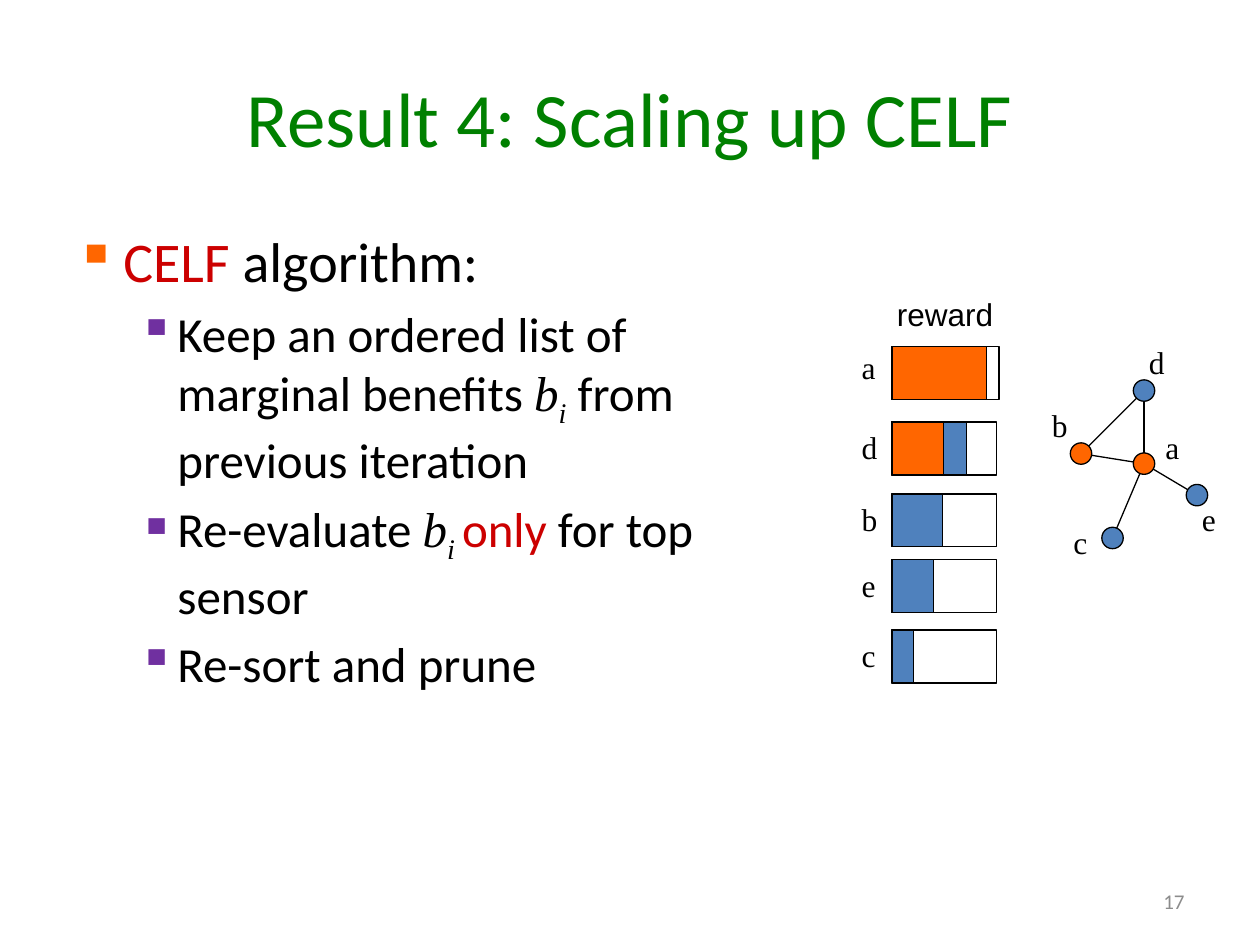
from lxml.etree import SubElement
from pptx import Presentation
from pptx.dml.color import RGBColor
from pptx.enum.shapes import MSO_CONNECTOR, MSO_SHAPE
from pptx.enum.text import MSO_ANCHOR, PP_ALIGN
from pptx.oxml.ns import qn
from pptx.util import Inches, Pt

BLACK, RED, GREEN, GRAY = "000000", "CC0000", "008000", "8C8C8C"
ORANGE, BLUE, PURPLE = "FF6600", "4F81BD", "7030A0"
SANS, SERIF = "Calibri", "Times New Roman"

TITLE = "Result 4: Scaling up CELF"
PAGE = "17"
# Each bullet: level, then runs of (text, style)
BULLETS = [
    (0, [("CELF ", "key"), ("algorithm:", "plain")]),
    (1, [("Keep an ordered list of marginal benefits ", "plain"), ("b", "math"),
         ("i", "sub"), (" from previous iteration", "plain")]),
    (1, [("Re-evaluate ", "plain"), ("b", "math"), ("i ", "sub"), ("only", "key"),
         (" for top sensor", "plain")]),
    (1, [("Re-sort and prune", "plain")]),
]
# Each level: size, left margin, hanging indent, bullet colour
LEVELS = [(32, 0.38, 0.38, ORANGE), (28, 0.81, 0.31, PURPLE)]
STYLES = {"plain": (SANS, BLACK), "key": (SANS, RED),
          "math": (SERIF, BLACK), "sub": (SERIF, BLACK)}

# Each reward: sensor, top, label top, frame width, filled parts from back to front
REWARDS = [
    ("a", 2.75, 2.71, 0.85, [(ORANGE, 0.75)]),
    ("d", 3.35, 3.35, 0.83, [(BLUE, 0.59), (ORANGE, 0.41)]),
    ("b", 3.92, 3.92, 0.83, [(BLUE, 0.4)]),
    ("e", 4.44, 4.44, 0.83, [(BLUE, 0.33)]),
    ("c", 5.0, 5.0, 0.83, [(BLUE, 0.17)]),
]
BAR_LEFT, BAR_HEIGHT, LABEL_LEFT = 7.08, 0.42, 6.74

# Each node: centre, colour, label corner
NODES = {
    "a": ((9.08, 3.68), ORANGE, (9.15, 3.35)),
    "b": ((8.58, 3.6), ORANGE, (8.25, 3.17)),
    "c": ((8.83, 4.27), BLUE, (8.42, 4.1)),
    "d": ((9.08, 3.1), BLUE, (9.02, 2.67)),
    "e": ((9.5, 3.93), BLUE, (9.44, 3.92)),
}
EDGES = ["db", "ac", "da", "ea", "ab"]
NODE_SIZE = 0.17


def rgb(code):
    return RGBColor.from_string(code)


def set_font(font, size, name, color):
    font.size, font.name = Pt(size), name
    font.color.rgb = rgb(color)


def add_label(slide, text, left, top, width=0.33, height=0.4, size=18, name=SERIF,
              color=BLACK):
    frame = slide.shapes.add_textbox(*map(Inches, (left, top, width, height))).text_frame
    frame.word_wrap = False
    frame.text = text
    set_font(frame.paragraphs[0].font, size, name, color)
    return frame


def add_outlined(slide, kind, left, top, width, height, fill=None):
    shape = slide.shapes.add_shape(kind, *map(Inches, (left, top, width, height)))
    shape.shadow.inherit = False
    if fill:
        shape.fill.solid()
        shape.fill.fore_color.rgb = rgb(fill)
    else:
        shape.fill.background()
    shape.line.color.rgb = rgb(BLACK)
    shape.line.width = Pt(0.75)


def add_edge(slide, start, end):
    edge = slide.shapes.add_connector(MSO_CONNECTOR.STRAIGHT, *map(Inches, start + end))
    edge.line.color.rgb = rgb(BLACK)
    edge.line.width = Pt(0.75)
    SubElement(edge._element.spPr, qn("a:effectLst"))


def add_bullet(paragraph, level, runs):
    size, margin, hanging, color = LEVELS[level]
    paragraph.level = level
    paragraph.space_before = Pt(size * 0.2)
    properties = paragraph._p.get_or_add_pPr()
    properties.set("marL", str(Inches(margin)))
    properties.set("indent", str(-Inches(hanging)))
    SubElement(SubElement(properties, qn("a:buClr")), qn("a:srgbClr"), val=color)
    SubElement(properties, qn("a:buChar"), char="▪")
    for text, style in runs:
        run = paragraph.add_run()
        run.text = text
        set_font(run.font, size, *STYLES[style])
        run.font.italic = style in ("math", "sub")
        if style == "sub":
            run.font._element.set("baseline", "-25000")


def add_title_and_bullets(slide):
    title = slide.shapes.title
    title.left, title.top, title.width, title.height = map(Inches, (0.5, 0.3, 9, 1.25))
    title.text_frame.text = TITLE
    title.text_frame.vertical_anchor = MSO_ANCHOR.MIDDLE
    heading = title.text_frame.paragraphs[0]
    heading.alignment = PP_ALIGN.CENTER
    set_font(heading.font, 44, SANS, GREEN)

    body = slide.shapes.add_textbox(*map(Inches, (0.5, 1.75, 5.75, 5.25))).text_frame
    body.word_wrap = True
    for i, (level, runs) in enumerate(BULLETS):
        paragraph = body.add_paragraph() if i else body.paragraphs[0]
        add_bullet(paragraph, level, runs)

    page = add_label(slide, PAGE, 7.17, 6.95, 2.33, size=12, name=SANS, color=GRAY)
    page.word_wrap = True
    page.vertical_anchor = MSO_ANCHOR.MIDDLE
    page.paragraphs[0].alignment = PP_ALIGN.RIGHT


def add_rewards(slide):
    add_label(slide, "reward", 7.02, 2.29, 0.97, name="Arial")
    for sensor, top, label_top, width, parts in REWARDS:
        add_label(slide, sensor, LABEL_LEFT, label_top)
        for fill, length in [(None, width)] + parts:
            add_outlined(slide, MSO_SHAPE.RECTANGLE, BAR_LEFT, top, length, BAR_HEIGHT, fill)


def add_network(slide):
    for start, end in EDGES:
        add_edge(slide, NODES[start][0], NODES[end][0])
    for sensor, ((x, y), fill, corner) in NODES.items():
        add_outlined(slide, MSO_SHAPE.OVAL, x - NODE_SIZE / 2, y - NODE_SIZE / 2,
                     NODE_SIZE, NODE_SIZE, fill)
        add_label(slide, sensor, *corner)


def main():
    deck = Presentation()
    deck.slide_width, deck.slide_height = Inches(10), Inches(7.5)
    slide = deck.slides.add_slide(deck.slide_layouts[5])
    add_title_and_bullets(slide)
    add_rewards(slide)
    add_network(slide)
    deck.save("out.pptx")


if __name__ == "__main__":
    main()
